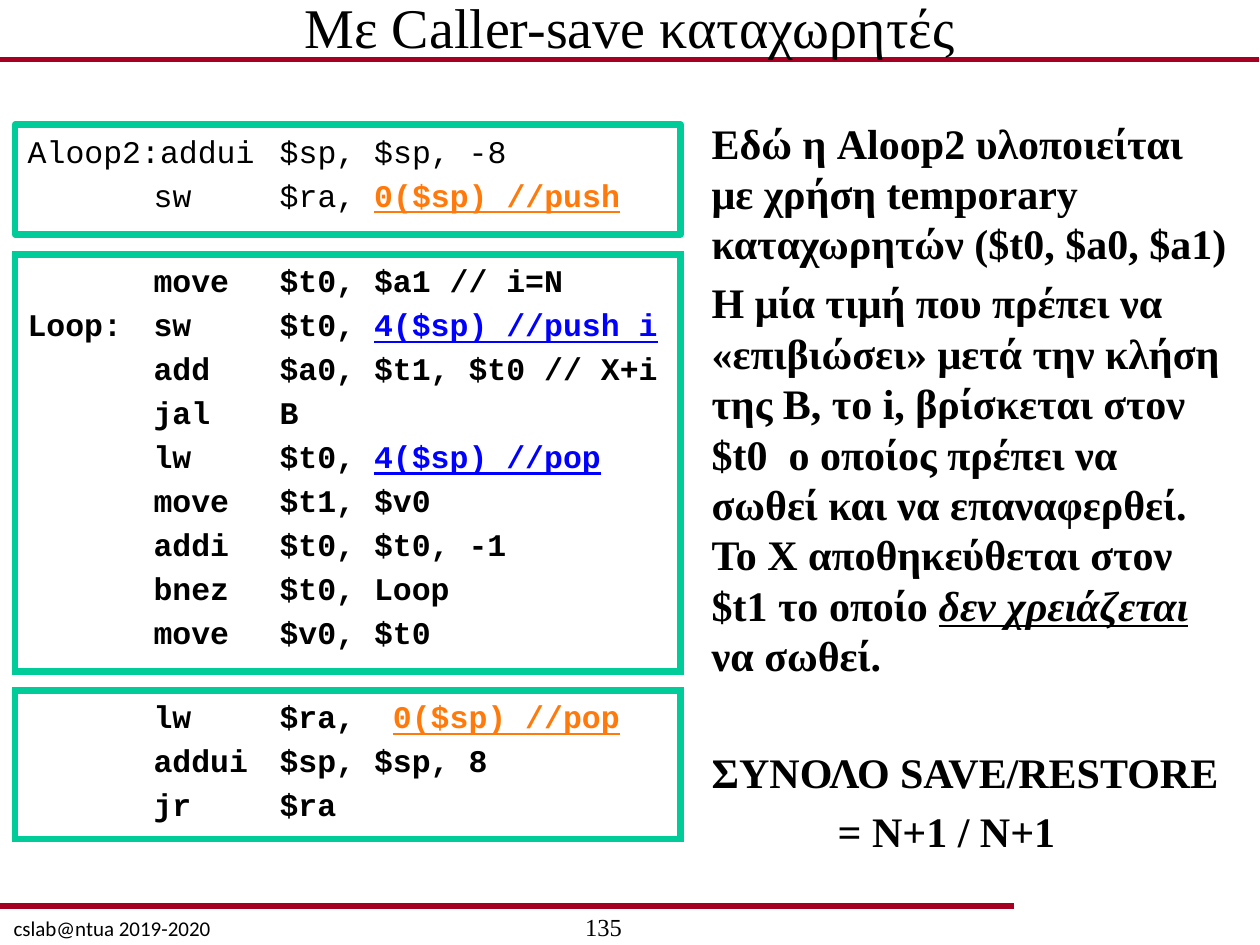
from lxml import etree
from pptx import Presentation
from pptx.dml.color import RGBColor
from pptx.enum.shapes import MSO_CONNECTOR, MSO_SHAPE
from pptx.enum.text import MSO_ANCHOR, MSO_AUTO_SIZE, PP_ALIGN
from pptx.oxml.ns import qn
from pptx.util import Inches, Pt

BLACK, RED, GREEN = "000000", "A50021", "00CC99"
SERIF, MONO = "Times New Roman", "Courier New"
STACK = {"color": "FF790B", "bold": True, "underline": True}
SAVED = {"color": "0000FF", "underline": True}
STRESS = {"italic": True, "underline": True}

# Each line is a list of (text, emphasis) runs
PROLOGUE = [
    [("Αloop2:addui\t$sp, $sp, -8", {})],
    [("\tsw\t$ra, ", {}), ("0($sp) //push", STACK)],
]
LOOP = [
    [("\tmove\t$t0, $a1 // i=N", {})],
    [("Loop:\tsw\t$t0, ", {}), ("4($sp) //push i", SAVED)],
    [("\tadd\t$a0, $t1, $t0 // X+i", {})],
    [("\tjal\tΒ", {})],
    [("\tlw\t$t0, ", {}), ("4($sp) //pop", SAVED)],
    [("\tmove\t$t1, $v0", {})],
    [("\taddi\t$t0, $t0, -1", {})],
    [("\tbnez\t$t0, Loop", {})],
    [("\tmove\t$v0, $t0", {})],
]
EPILOGUE = [
    [("\tlw\t$ra,  ", {}), ("0($sp) //pop", STACK)],
    [("\taddui\t$sp, $sp, 8", {})],
    [("\tjr\t$ra", {})],
]
EXPLANATION = [
    [("Εδώ η Aloop2 υλοποιείται με χρήση temporary καταχωρητών "
      "($t0, $a0, $a1)", {})],
    [("Η μία τιμή που πρέπει να «επιβιώσει» μετά την κλήση της Β, το i, "
      "βρίσκεται στον $t0  ο οποίος πρέπει να σωθεί και να επαναφερθεί. "
      "Το Χ αποθηκεύθεται στον $t1 το οποίο ", {}),
     ("δεν χρειάζεται", STRESS), (" να σωθεί.", {})],
    [("ΣΥΝΟΛΟ SAVE/RESTORE", {})],
    [("\t= N+1 / N+1", {})],
]


def rgb(color):
    return RGBColor.from_string(color)


def place(shape, left, top, width, height):
    shape.left, shape.top = Inches(left), Inches(top)
    shape.width, shape.height = Inches(width), Inches(height)


def style_font(font, name, size, bold=False):
    font.name, font.size, font.bold = name, Pt(size), bold
    font.color.rgb = rgb(BLACK)


def set_tabs(paragraph):
    """Flush left, no bullet, a tab stop at every inch."""
    props = paragraph._p.get_or_add_pPr()
    props.set("marL", "0")
    props.set("indent", "0")
    props.set("defTabSz", str(Inches(1)))
    etree.SubElement(props, qn("a:buNone"))


def write_lines(shape, lines, name, size, bold, pitch, gaps):
    frame = shape.text_frame
    frame.word_wrap = True
    frame.auto_size = MSO_AUTO_SIZE.NONE
    frame.vertical_anchor = MSO_ANCHOR.TOP
    for number, (line, gap) in enumerate(zip(lines, gaps)):
        paragraph = frame.add_paragraph() if number else frame.paragraphs[0]
        set_tabs(paragraph)
        paragraph.alignment = PP_ALIGN.LEFT
        paragraph.line_spacing = Pt(pitch)
        paragraph.space_before = Pt(gap)
        style_font(paragraph.font, name, size, bold)
        for text, emphasis in line:
            run = paragraph.add_run()
            run.text = text
            for key, value in emphasis.items():
                if key == "color":
                    run.font.color.rgb = rgb(value)
                else:
                    setattr(run.font, key, value)


def write_code(box, lines, top, height, bold):
    place(box, 0.12, top, 5.28, height)
    box.fill.background()
    box.line.color.rgb = rgb(GREEN)
    box.line.width = Pt(3.75)
    gaps = [0] + [3.1] * (len(lines) - 1)
    write_lines(box, lines, MONO, 18, bold, 22, gaps)


def add_code_box(slide, lines, top, height):
    box = slide.shapes.add_shape(MSO_SHAPE.RECTANGLE, 0, 0, 0, 0)
    box.shadow.inherit = False
    write_code(box, lines, top, height, bold=True)
    etree.SubElement(box.line._get_or_add_ln(), qn("a:miter"), lim="800000")


def add_rule(slide, y, end):
    rule = slide.shapes.add_connector(
        MSO_CONNECTOR.STRAIGHT, 0, Inches(y), Inches(end), Inches(y))
    rule.line.color.rgb = rgb(RED)
    rule.line.width = Pt(3)
    etree.SubElement(rule._element.spPr, qn("a:effectLst"))
    # Send behind the text
    rule._element.getparent().insert(2, rule._element)


def write_centred(shape, text, name, size):
    paragraph = shape.text_frame.paragraphs[0]
    paragraph.text = text
    paragraph.alignment = PP_ALIGN.CENTER
    style_font(paragraph.font, name, size)


def add_footer(slide, text, box, name, size):
    footer = slide.shapes.add_textbox(0, 0, 0, 0)
    place(footer, *box)
    footer.text_frame.word_wrap = False
    write_centred(footer, text, name, size)


def main():
    deck = Presentation()
    deck.slide_width, deck.slide_height = Inches(10), Inches(7.5)
    slide = deck.slides.add_slide(deck.slide_layouts[1])

    # Title and red rules
    title = slide.shapes.title
    place(title, 0.75, 0.13, 8.5, 0.16)
    title.text_frame.auto_size = MSO_AUTO_SIZE.NONE
    title.text_frame.vertical_anchor = MSO_ANCHOR.MIDDLE
    write_centred(title, "Με Caller-save καταχωρητές", SERIF, 32)
    add_rule(slide, 0.47, 9.99)
    add_rule(slide, 7.19, 8.05)

    # Assembly code
    write_code(slide.placeholders[1], PROLOGUE, 0.99, 0.87, bold=False)
    add_code_box(slide, LOOP, 2.02, 3.31)
    add_code_box(slide, EPILOGUE, 5.48, 1.18)

    # Explanation
    explanation = slide.shapes.add_textbox(0, 0, 0, 0)
    place(explanation, 5.55, 0.88, 4.33, 5.67)
    write_lines(explanation, EXPLANATION, SERIF, 24, True, 28.8, [0, 5, 38, 5])

    # Footer
    add_footer(slide, "cslab@ntua 2019-2020", (-0.02, 7.22, 1.82, 0.2),
               "Calibri", 12)
    add_footer(slide, "135", (3.75, 7.19, 2.08, 0.26), SERIF, 14)

    deck.save("out.pptx")


if __name__ == "__main__":
    main()
